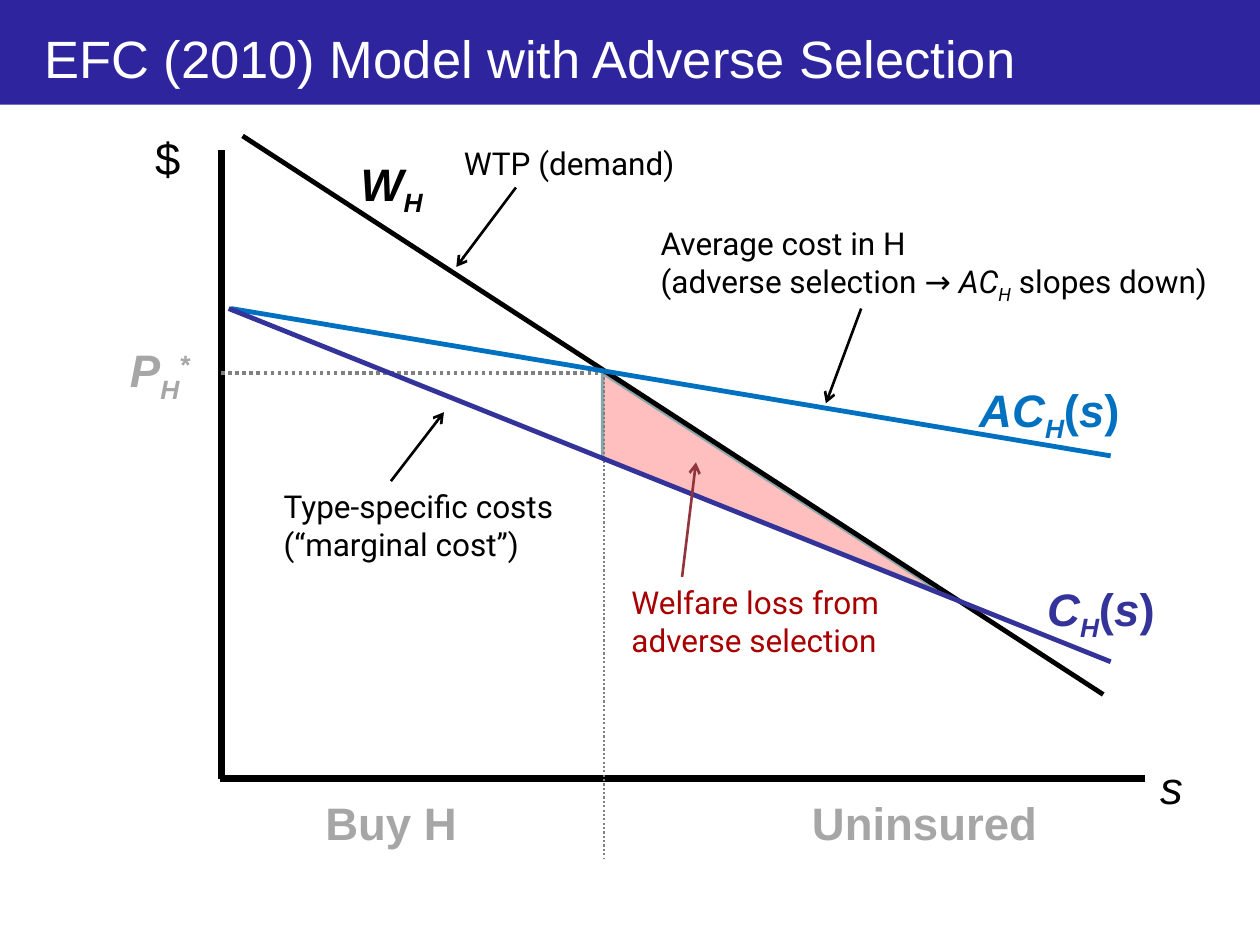
from lxml import etree
from pptx import Presentation
from pptx.dml.color import RGBColor
from pptx.enum.dml import MSO_LINE
from pptx.enum.shapes import MSO_CONNECTOR, MSO_SHAPE
from pptx.enum.text import MSO_ANCHOR, MSO_AUTO_SIZE, PP_ALIGN
from pptx.oxml.ns import qn
from pptx.util import Cm, Pt

LEFT, MID = PP_ALIGN.LEFT, PP_ALIGN.CENTER
DOT = MSO_LINE.ROUND_DOT
STRAIGHT = MSO_CONNECTOR.STRAIGHT
RECT = MSO_SHAPE.RECTANGLE

HEX = {
    "band": "2E249E", "white": "FFFFFF", "black": "000000",
    "avg": "0070C0", "cost": "333399", "gray": "A6A6A6",
    "dots": "808080", "loss": "FF0000", "edge": "8AA6A8",
    "warn": "A80000", "dart": "90353B",
}
SHIFT = {"_": "-25000", "^": "30000"}


def color(name):
    return RGBColor.from_string(HEX[name])


def write(frame, runs, size=26, font="Arial", ink="black", bold=False,
          align=LEFT, gap=None, lead=None):
    """Fill a frame; runs are (text, marks): i italic, _ sub, ^ super."""
    frame.word_wrap = True
    para = frame.paragraphs[0]
    para.alignment = align
    para.space_after = gap
    para.line_spacing = lead
    for text, marks in runs:
        for row, part in enumerate(text.split("\n")):
            if row:
                para.add_line_break()
            run = para.add_run()
            run.text = part
            face = run.font
            face.name, face.size = font, Pt(size)
            face.bold, face.italic = bold, "i" in marks
            face.color.rgb = color(ink)
            for mark in marks.replace("i", ""):
                face._element.set("baseline", SHIFT[mark])


def label(slide, box, spot, runs, **style):
    """Place text at (left, top, width, height) within the box."""
    x, y, w, h = spot
    text = slide.shapes.add_textbox(
        Cm(box[0] + x), Cm(box[1] + y), Cm(w), Cm(h))
    write(text.text_frame, runs, **style)


def line(slide, box, start, end, ink="black", width=2.75, dash=None,
         arrow=False):
    """Draw a line between two points within the box."""
    ends = [Cm(box[k] + point[k]) for point in (start, end) for k in (0, 1)]
    rule = slide.shapes.add_connector(STRAIGHT, *ends)
    rule.line.color.rgb = color(ink)
    rule.line.width = Pt(width)
    if dash:
        rule.line.dash_style = dash
    props = rule._element.spPr
    if arrow:
        etree.SubElement(props.find(qn("a:ln")), qn("a:tailEnd"), type="arrow")
    etree.SubElement(props, qn("a:effectLst"))


def header(slide, box):
    """Title on a full-width band."""
    x, y, w, h = box
    band = slide.shapes.add_shape(RECT, *map(Cm, box))
    band.shadow.inherit = False
    band.fill.solid()
    band.fill.fore_color.rgb = color("band")
    band.line.fill.background()
    title = slide.shapes.title
    title._element.addprevious(band._element)
    title.left, title.top = Cm(x + 0.64), Cm(y + 0.43)
    title.width, title.height = Cm(w - 1.07), Cm(h - 0.64)
    frame = title.text_frame
    frame.auto_size = MSO_AUTO_SIZE.NONE
    frame.vertical_anchor = MSO_ANCHOR.MIDDLE
    write(frame, [("EFC (2010) Model with Adverse Selection", "")],
          size=30, ink="white")


def wedge(slide, box):
    """Shaded welfare loss between demand and cost."""
    points = [(Cm(box[0] + x), Cm(box[1] + y))
              for x, y in [(7.69, 4.5), (7.69, 6.23), (14.55, 8.94)]]
    pen = slide.shapes.build_freeform(*points[0])
    pen.add_line_segments(points[1:], close=True)
    area = pen.convert_to_shape()
    area.shadow.inherit = False
    area.fill.solid()
    area.fill.fore_color.rgb = color("loss")
    tint = area._element.spPr.find(qn("a:solidFill"))[0]
    etree.SubElement(tint, qn("a:alpha"), val="25000")
    area.line.color.rgb = color("edge")
    area.line.width = Pt(2)


def graph(slide, box):
    """Axes, curves and guides with their labels."""
    w, h = box[2:]
    wedge(slide, box)

    # Axes
    line(slide, box, (0, 0), (0, h), width=4)
    line(slide, box, (w, h), (-0.03, h), width=4)
    for spot, name in [((-1.58, -0.61, 1.65, 2.08), ("$", "")),
                       ((w + 0.05, h - 0.61, 1.12, 1.52), ("s", "i"))]:
        label(slide, box, spot, [name], gap=Pt(8), lead=1.07)

    # Equilibrium guides
    line(slide, box, (0, 4.5), (7.62, 4.5), ink="dots", width=2, dash=DOT)
    line(slide, box, (7.72, 4.5), (7.72, 14.3), ink="dots", width=1.25,
         dash=DOT)

    # Curves
    for start, end, ink in [((0.43, -0.28), (17.78, 10.98), "black"),
                            ((0.2, 3.2), (17.93, 6.17), "avg"),
                            ((0.15, 3.2), (17.93, 10.32), "cost")]:
        line(slide, box, start, end, ink=ink)

    # Curve and price names
    sub = ("H", "i_")
    arg = [("(", ""), ("s", "i"), (")", "")]
    for x, y, wide, runs, ink in [
            (2.56, 0, 6.38, [("W", "i"), sub], "black"),
            (15.03, 4.55, 5.26, [("AC", "i"), sub] + arg, "avg"),
            (16.4, 8.56, 3.2, [("C", "i"), sub] + arg, "cost"),
            (-2.09, 3.76, 2.11, [("P", "i"), sub, ("*", "i^")], "gray")]:
        label(slide, box, (x, y, wide, 1.37), runs, ink=ink, bold=True)

    # Market segments
    for x, wide, text in [(1.34, 4.17, "Buy H"), (10.99, 6.38, "Uninsured")]:
        label(slide, box, (x, h + 0.2, wide, 1.37), [(text, "")], ink="gray",
              bold=True, align=MID)


def notes(slide, box):
    """Remarks, each with an arrow to its curve or area."""
    for spot, runs, start, end, ink, dart in [
            ((4.64, -0.25, 5.94, 1.02), [("WTP (demand)", "")],
             (5.94, 0.76), (4.74, 2.36), "black", "black"),
            ((8.61, 1.37, 11.84, 1.8),
             [("Average cost in H \n(adverse selection → ", ""),
              ("AC", "i"), ("H", "i_"), (" slopes down)", "")],
             (12.9, 3.2), (12.19, 5.11), "black", "black"),
            ((1.01, 6.68, 5.94, 1.8),
             [("Type-specific costs (“marginal cost”)", "")],
             (3.42, 6.68), (4.49, 5.29), "black", "black"),
            ((8.02, 8.61, 5.94, 1.8),
             [("Welfare loss from adverse selection", "")],
             (9.29, 8.61), (9.57, 6.3), "warn", "dart")]:
        label(slide, box, spot, runs, size=18, font="Roboto", ink=ink)
        line(slide, box, start, end, ink=dart, width=1.5, arrow=True)


def main():
    deck = Presentation()
    deck.slide_width, deck.slide_height = Cm(25.4), Cm(19.05)
    slide = deck.slides.add_slide(deck.slide_layouts[5])
    plot = (4.46, 3.02, 18.63, 12.68)
    header(slide, (0, 0, 25.4, 2.11))
    graph(slide, plot)
    notes(slide, plot)
    deck.save("out.pptx")


if __name__ == "__main__":
    main()
